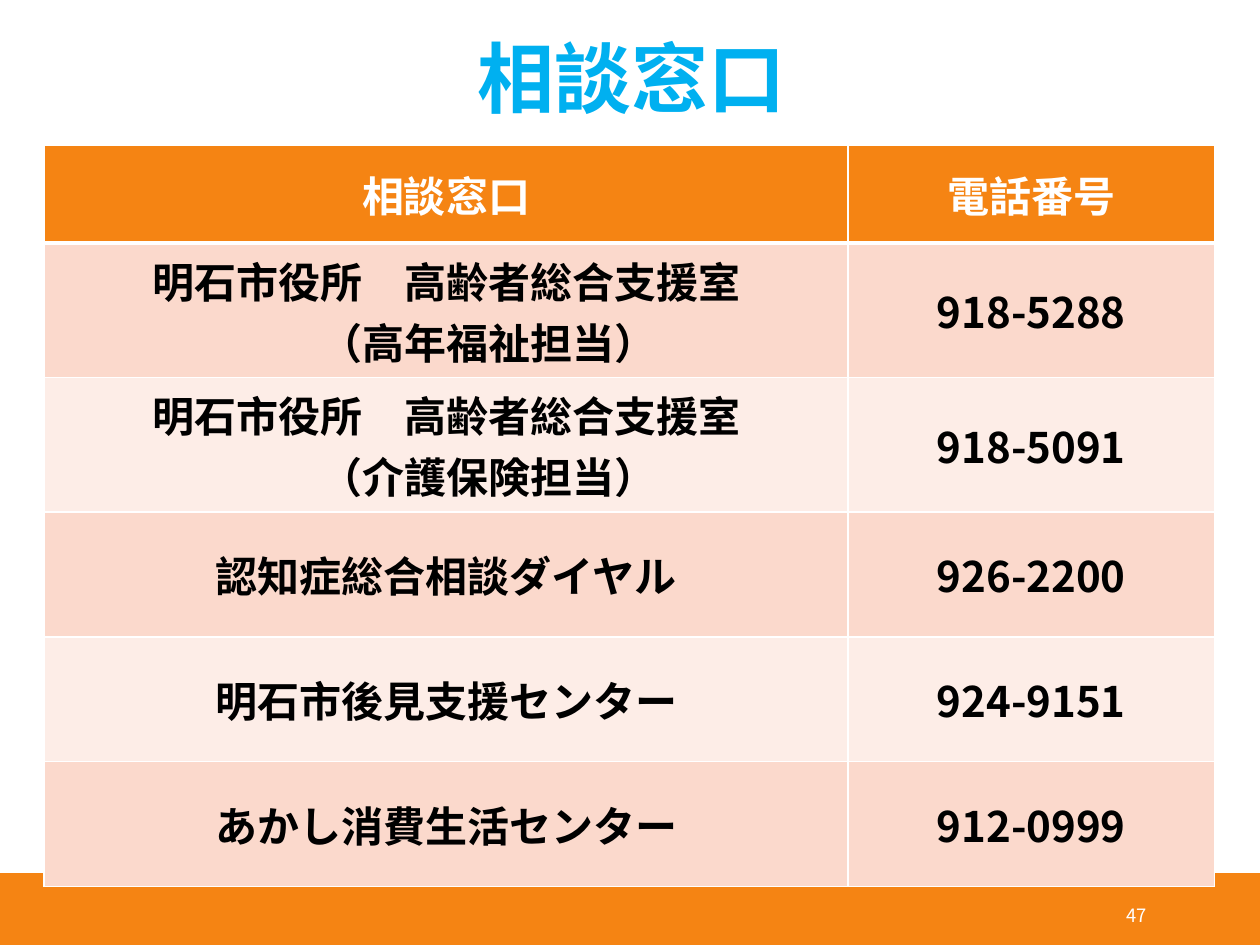
from dataclasses import dataclass

from lxml.etree import SubElement
from pptx import Presentation
from pptx.dml.color import RGBColor
from pptx.enum.shapes import MSO_SHAPE
from pptx.enum.text import MSO_ANCHOR, PP_ALIGN
from pptx.oxml.ns import qn
from pptx.util import Inches, Pt


@dataclass(frozen=True)
class Theme:
    font: str = "Noto Sans CJK JP"
    accent: str = "F58413"
    title: str = "00B0F0"
    ink: str = "000000"
    light: str = "FFFFFF"
    bands: tuple = ("FBD9CC", "FDEDE7")
    title_size: float = 44
    table_size: float = 24
    number_size: float = 10.5
    rule: float = 1
    header_rule: float = 3


class SlideBuilder:
    """Draws themed elements on one page, measured on a grid of 100 columns by 75 rows."""

    def __init__(self, deck, theme):
        self.theme = theme
        self.page = deck.slides.add_slide(deck.slide_layouts[6])
        self.column = deck.slide_width / 100
        self.row = deck.slide_height / 75

    def place(self, left, top, width, height):
        return (round(left * self.column), round(top * self.row),
                round(width * self.column), round(height * self.row))

    def add_span(self, para, text, size, color, bold=False, align=PP_ALIGN.CENTER):
        para.alignment = align
        span = para.add_run()
        span.text = text
        span.font.size = Pt(size)
        span.font.bold = bold
        span.font.color.rgb = RGBColor.from_string(color)
        span.font.name = self.theme.font
        SubElement(span._r.get_or_add_rPr(), qn("a:ea"), typeface=self.theme.font)

    def bar(self, *area):
        box = self.page.shapes.add_shape(MSO_SHAPE.RECTANGLE, *self.place(*area))
        box.shadow.inherit = False
        box.fill.solid()
        box.fill.fore_color.rgb = RGBColor.from_string(self.theme.accent)
        box.line.fill.background()

    def text(self, area, text, size, color, anchor=MSO_ANCHOR.TOP, spacing=1.0, **style):
        box = self.page.shapes.add_textbox(*self.place(*area))
        frame = box.text_frame
        frame.word_wrap = True
        frame.vertical_anchor = anchor
        frame.paragraphs[0].line_spacing = spacing
        self.add_span(frame.paragraphs[0], text, size, color, **style)

    def border(self, cell, side, width):
        line = SubElement(cell._tc.get_or_add_tcPr(), qn(f"a:ln{side}"), w=str(Pt(width)))
        fill = SubElement(line, qn("a:solidFill"))
        SubElement(fill, qn("a:srgbClr"), val=self.theme.light)

    def cell(self, cell, lines, fill, color, top_rule, bottom_rule):
        rule = self.theme.rule
        for side, width in zip("LRTB", (rule, rule, top_rule, bottom_rule)):
            self.border(cell, side, width)
        cell.fill.solid()
        cell.fill.fore_color.rgb = RGBColor.from_string(fill)
        cell.vertical_anchor = MSO_ANCHOR.MIDDLE
        frame = cell.text_frame
        for index, line in enumerate(lines.split("\n")):
            para = frame.add_paragraph() if index else frame.paragraphs[0]
            self.add_span(para, line, self.theme.table_size, color, bold=True)
            if index:
                para._p.get_or_add_pPr().set("marL", str(Pt(2 * self.theme.table_size)))

    def table(self, left, top, widths, heights, records):
        theme = self.theme
        area = self.place(left, top, sum(widths), sum(heights))
        table = self.page.shapes.add_table(len(heights), len(widths), *area).table
        table.horz_banding = False
        for column, width in zip(table.columns, widths):
            column.width = round(width * self.column)
        for index, (row, height, record) in enumerate(zip(table.rows, heights, records)):
            row.height = round(height * self.row)
            fill = theme.bands[(index - 1) % 2] if index else theme.accent
            color = theme.ink if index else theme.light
            top_rule = theme.header_rule if index == 1 else theme.rule
            bottom_rule = theme.rule if index else theme.header_rule
            for cell, lines in zip(row.cells, record):
                self.cell(cell, lines, fill, color, top_rule, bottom_rule)


CONTACTS = [
    ("相談窓口", "電話番号"),
    ("明石市役所　高齢者総合支援室\n（高年福祉担当）", "918-5288"),
    ("明石市役所　高齢者総合支援室\n（介護保険担当）", "918-5091"),
    ("認知症総合相談ダイヤル", "926-2200"),
    ("明石市後見支援センター", "924-9151"),
    ("あかし消費生活センター", "912-0999"),
]


def main():
    deck = Presentation()
    deck.slide_width, deck.slide_height = Inches(10), Inches(7.5)
    theme = Theme()
    slide = SlideBuilder(deck, theme)
    slide.bar(0, 70, 100, 5)
    slide.bar(0, 69.3, 100, 0.7)
    slide.table(3.5, 11.5, [63.8, 29.1], [7.8] + [9.9] * 5, CONTACTS)
    slide.text((5.1, 2.8, 90, 12.5), "相談窓口", theme.title_size, theme.title,
               spacing=0.9, bold=True)
    slide.text((81.2, 70.6, 10.8, 4), "47", theme.number_size, theme.light,
               anchor=MSO_ANCHOR.MIDDLE, align=PP_ALIGN.RIGHT)
    deck.save("out.pptx")


if __name__ == "__main__":
    main()
